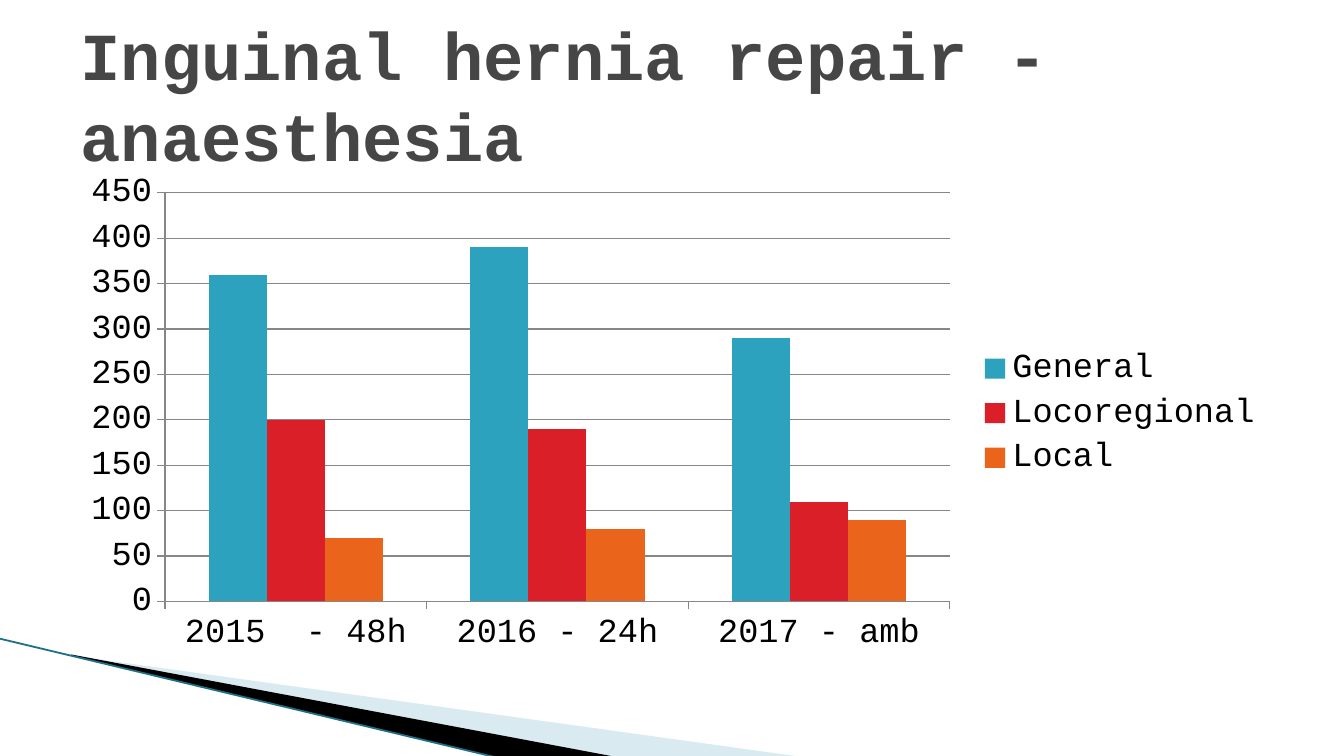
"""Build the slide on anaesthesia for inguinal hernia repair."""
from dataclasses import dataclass

from lxml import etree
from pptx import Presentation
from pptx.chart.data import CategoryChartData
from pptx.dml.color import RGBColor
from pptx.enum.chart import XL_CHART_TYPE, XL_LEGEND_POSITION, XL_TICK_MARK
from pptx.enum.shapes import MSO_CONNECTOR
from pptx.enum.text import MSO_ANCHOR
from pptx.oxml.ns import qn
from pptx.util import Inches, Pt

COLUMNS = XL_CHART_TYPE.COLUMN_CLUSTERED
LEGEND_RIGHT = XL_LEGEND_POSITION.RIGHT
TICK_OUTSIDE = XL_TICK_MARK.OUTSIDE
STRAIGHT = MSO_CONNECTOR.STRAIGHT
MIDDLE = MSO_ANCHOR.MIDDLE


@dataclass(frozen=True)
class Theme:
    font: str = "Courier New"
    title_size: int = 36
    chart_size: int = 18
    title: str = "464646"
    black: str = "000000"
    grid: str = "878787"
    pale_band: str = "A0CBDC"
    edge: str = "1F7086"
    general: str = "2DA2BF"
    locoregional: str = "DA1F28"
    local: str = "EB641B"


THEME = Theme()


def color(value):
    return RGBColor.from_string(value)


def add_text(page, text, *, left, top, width, height, size, ink, bold=False):
    box = page.shapes.add_textbox(Inches(left), Inches(top), Inches(width), Inches(height))
    box.text_frame.word_wrap = True
    box.text_frame.vertical_anchor = MIDDLE
    span = box.text_frame.paragraphs[0].add_run()
    span.text = text
    span.font.name = THEME.font
    span.font.size = Pt(size)
    span.font.bold = bold
    span.font.color.rgb = color(ink)
    return box


deck = Presentation()
deck.slide_width = Inches(10)
deck.slide_height = Inches(10 * 9 / 16)
page = deck.slides.add_slide(deck.slide_layouts[6])

bands = [
    ([(0.55, 4.88), (5.95, 5.63), (4.56, 5.63)], THEME.pale_band, 40),
    ([(0.53, 4.87), (4.57, 5.63), (3.72, 5.64), (0.54, 4.88)], THEME.black, 100),
]
for points, fill, opacity in bands:
    corners = [(Inches(x), Inches(y)) for x, y in points]
    builder = page.shapes.build_freeform(*corners[0])
    builder.add_line_segments(corners[1:], close=True)
    band = builder.convert_to_shape()
    band.shadow.inherit = False
    band.fill.solid()
    band.fill.fore_color.rgb = color(fill)
    band.line.fill.background()
    if opacity < 100:
        tint = band._element.spPr.find(qn("a:solidFill")).find(qn("a:srgbClr"))
        etree.SubElement(tint, qn("a:alpha"), val=str(opacity * 1000))

edge = page.shapes.add_connector(STRAIGHT, Inches(-0.01), Inches(4.75), Inches(3.71), Inches(5.64))
edge.line.color.rgb = color(THEME.edge)
edge.line.width = Pt(0.95)
etree.SubElement(edge._element.spPr, qn("a:effectLst"))

series_table = [
    ("General", (360, 390, 290), THEME.general),
    ("Locoregional", (200, 190, 110), THEME.locoregional),
    ("Local", (70, 80, 90), THEME.local),
]
data = CategoryChartData()
data.categories = ["2015  - 48h", "2016 - 24h", "2017 - amb"]
for name, values, fill in series_table:
    data.add_series(name, values)

frame = page.shapes.add_chart(COLUMNS, Inches(0.5), Inches(1.22), Inches(9), Inches(3.71), data)
chart = frame.chart
chart.has_title = False
chart.font.name = THEME.font
chart.font.size = Pt(THEME.chart_size)
chart.font.color.rgb = color(THEME.black)
chart.has_legend = True
chart.legend.position = LEGEND_RIGHT
chart.legend.include_in_layout = False

plot = chart.plots[0]
plot.gap_width = 150
plot.overlap = 0
plot.vary_by_categories = False
for series, (name, values, fill) in zip(plot.series, series_table):
    series.format.fill.solid()
    series.format.fill.fore_color.rgb = color(fill)

chart.value_axis.minimum_scale = 0
chart.value_axis.maximum_scale = 450
chart.value_axis.major_unit = 50
chart.value_axis.has_major_gridlines = True
for axis in (chart.category_axis, chart.value_axis):
    axis.major_tick_mark = TICK_OUTSIDE
for ruled in (chart.category_axis, chart.value_axis, chart.value_axis.major_gridlines):
    ruled.format.line.color.rgb = color(THEME.grid)
    ruled.format.line.width = Pt(0.75)

add_text(page, "Inguinal hernia repair - anaesthesia", left=0.5, top=0.23, width=9, height=0.94,
         size=THEME.title_size, ink=THEME.title, bold=True)

deck.save("out.pptx")
